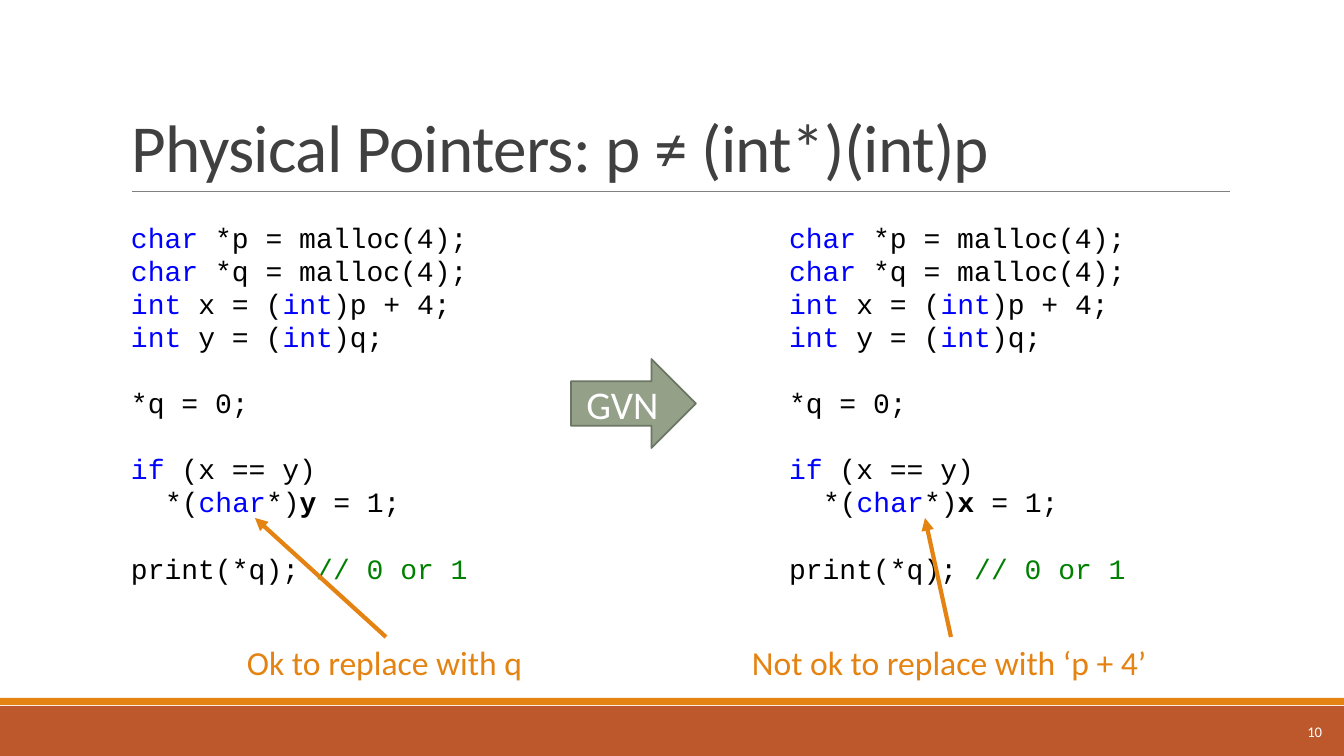
from pptx import Presentation
from pptx.dml.color import RGBColor
from pptx.enum.shapes import MSO_CONNECTOR as Connector, MSO_SHAPE as Shape
from pptx.enum.text import MSO_ANCHOR as Anchor, PP_ALIGN as Align
from pptx.util import Emu, Pt
from lxml.etree import SubElement
from pptx.oxml.ns import qn

SCALE = 914400 / 100.8
ORANGE = "E48312"
TITLE = "Physical Pointers: p ≠ (int*)(int)p"
KEYWORDS = ("char", "int", "if")
CODE = [
    "char| *p = malloc(4);",
    "char| *q = malloc(4);",
    "int| x = (|int|)p + 4;",
    "int| y = (|int|)q;",
    "*q = 0;",
    "if| (x == y)",
    "*(|char|*)|{}| = 1;",
    "print(*q); |// 0 or 1",
]
AFTER_GAP = (4, 5, 7)
INDENTED = 6


def px(*lengths):
    return [Emu(round(length * SCALE)) for length in lengths]


def rgb(color):
    return RGBColor.from_string(color)


deck = Presentation()
deck.slide_width, deck.slide_height = px(1344, 756)
page = deck.slides.add_slide(deck.slide_layouts[6])

for kind, place, fill in [
    (Shape.RECTANGLE, (0, 706, 1344, 50), "BD582C"),
    (Shape.RECTANGLE, (0, 698, 1344, 7), ORANGE),
    (Shape.RIGHT_ARROW, (571, 359, 125, 89), "94A088"),
]:
    shape = page.shapes.add_shape(kind, *px(*place))
    shape.shadow.inherit = False
    shape.fill.solid()
    shape.fill.fore_color.rgb = rgb(fill)
    shape.line.fill.background()

arrow = shape
arrow.line.color.rgb = rgb("6D7665")
arrow.line.width = Pt(1.25)
arrow.text_frame.vertical_anchor = Anchor.MIDDLE
para = arrow.text_frame.paragraphs[0]
para.text = "GVN"
para.alignment = Align.CENTER
para.font.name = "Calibri"
para.font.size = Pt(28)
para.font.color.rgb = rgb("FFFFFF")

for left, pointer in [(131, "y"), (789, "x")]:
    box = page.shapes.add_textbox(*px(left, 219, 356, 392))
    frame = box.text_frame
    frame.word_wrap = True
    frame.margin_left = frame.margin_right = 0
    for number, code in enumerate(CODE):
        para = frame.add_paragraph() if number else frame.paragraphs[0]
        para.font.name = "Courier New"
        para.font.size = Pt(20)
        para.line_spacing = 0.9
        para.space_after = Pt(2)
        if number in AFTER_GAP:
            para.space_before = Pt(23.7)
        if number == INDENTED:
            para._p.get_or_add_pPr().set("marL", str(px(34)[0]))
        for piece in code.format(pointer).split("|"):
            span = para.add_run()
            span.text = piece
            color = "0000FF" if piece in KEYWORDS else "000000"
            if piece.startswith("//"):
                color = "008000"
            span.font.color.rgb = rgb(color)
            if piece == pointer:
                span.font.bold = True

for start, end, color, width in [
    ((132, 191), (1230, 191), "808080", 0.5),
    ((386, 637), (255, 518), ORANGE, 3),
    ((951, 637), (925, 518), ORANGE, 3),
]:
    line = page.shapes.add_connector(Connector.STRAIGHT, *px(*start, *end))
    line.line.color.rgb = rgb(color)
    line.line.width = Pt(width)
    if color == ORANGE:
        SubElement(line.line._get_or_add_ln(), qn("a:tailEnd"), type="triangle")
    SubElement(line._element.spPr, qn("a:effectLst"))

for text, place, size, color, anchor, align, wrap in [
    (TITLE, (122, 31, 1138, 160), 48, "404040", Anchor.BOTTOM, Align.LEFT, True),
    ("Ok to replace with q", (237, 637, 298, 50),
     24, ORANGE, Anchor.TOP, Align.LEFT, False),
    ("Not ok to replace with ‘p + 4’", (742, 637, 417, 50),
     24, ORANGE, Anchor.TOP, Align.LEFT, False),
    ("10", (1187, 712, 145, 40), 10.5, "FFFFFF", Anchor.MIDDLE, Align.RIGHT, True),
]:
    box = page.shapes.add_textbox(*px(*place))
    box.text_frame.word_wrap = wrap
    box.text_frame.vertical_anchor = anchor
    para = box.text_frame.paragraphs[0]
    para.text = text
    para.alignment = align
    para.font.name = "Calibri"
    para.font.size = Pt(size)
    para.font.color.rgb = rgb(color)
    if text == TITLE:
        para.line_spacing = 0.85
        para.runs[0].font._element.set("spc", "-50")

deck.save("out.pptx")
